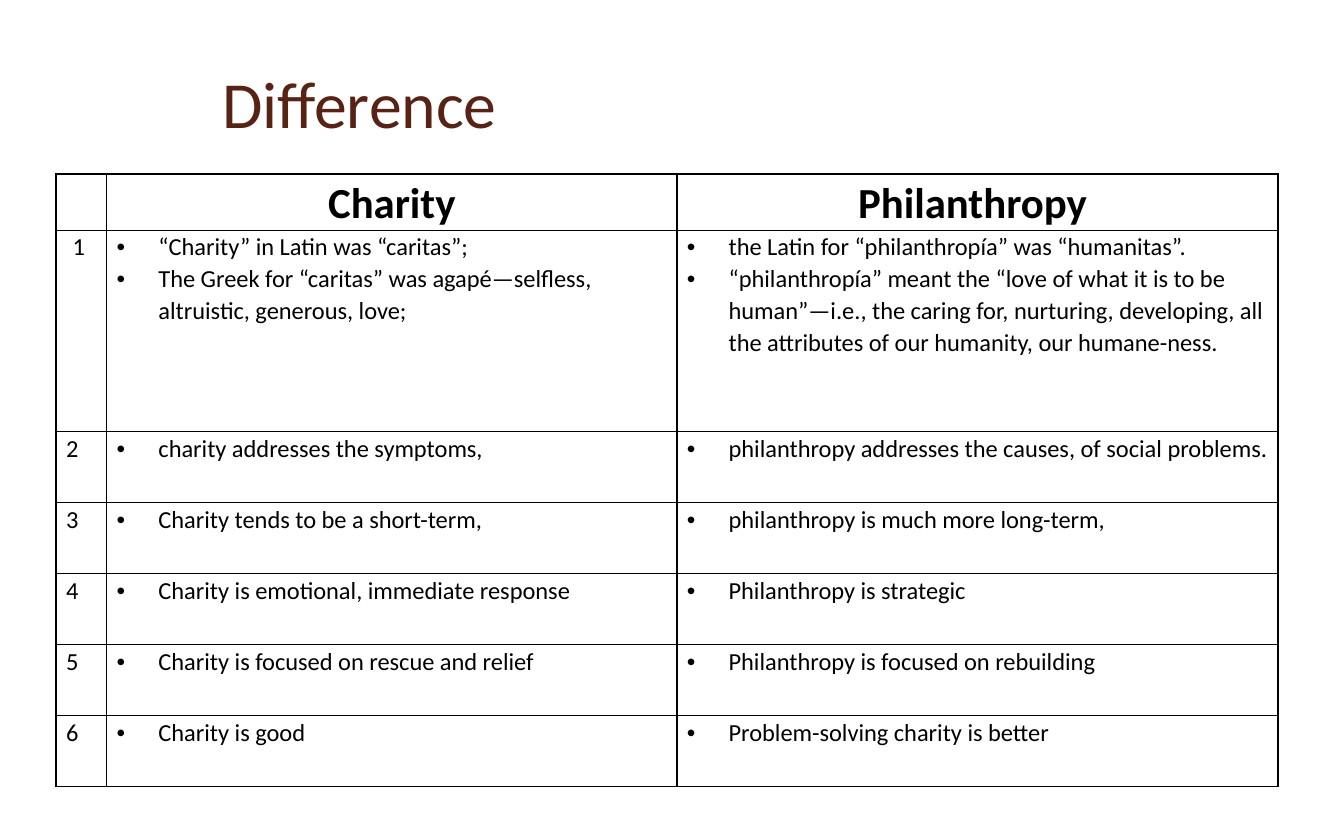
from lxml import etree
from pptx import Presentation
from pptx.dml.color import RGBColor
from pptx.enum.text import MSO_ANCHOR as Anchor, PP_ALIGN as Align
from pptx.oxml.ns import qn
from pptx.util import Inches, Pt

# Content
TITLE = "Difference"
HEADINGS = ["", "Charity", "Philanthropy "]
ROWS = [
    (["“Charity” in Latin was “caritas”;",
      "The Greek for “caritas” was agapé—selfless, altruistic, generous, love;"],
     ["the Latin for “philanthropía” was “humanitas”.",
      "“philanthropía” meant the “love of what it is to be human”—i.e., the caring for, "
      "nurturing, developing, all the attributes of our humanity, our humane-ness."]),
    (["charity addresses the symptoms,"],
     ["philanthropy addresses the causes, of social problems."]),
    (["Charity tends to be a short-term,"], ["philanthropy is much more long-term,"]),
    (["Charity is emotional, immediate response"], ["Philanthropy is strategic"]),
    (["Charity is focused on rescue and relief"], ["Philanthropy is focused on rebuilding"]),
    (["Charity is good"], ["Problem-solving charity is better"]),
]

# Formats
BROWN = RGBColor(0x57, 0x23, 0x14)
BLACK = RGBColor(0, 0, 0)
TITLE_FONT = {"size": Pt(43), "bold": False}
HEADING_FONT = {"size": Pt(28), "bold": True}
BODY_FONT = {"size": Pt(16), "bold": False}
CELL_FORMAT = {"margin_left": Inches(0.09), "margin_right": Inches(0.09),
               "margin_top": 0, "margin_bottom": 0, "vertical_anchor": Anchor.TOP}
COLUMN_WIDTHS = [0.46, 5.18, 5.46]
ROW_HEIGHTS = [0.51, 1.83] + [0.645] * 5
HANGING = 0.38


def apply(target, values):
    for name, value in values.items():
        setattr(target, name, value)


def write(para, text, font, color=BLACK):
    span = para.add_run()
    span.text = text
    apply(span.font, {"name": "Calibri", **font})
    span.font.color.rgb = color


def add_bullet(para):
    props = para._p.get_or_add_pPr()
    apply_indent(props, HANGING, -HANGING)
    etree.SubElement(props, qn("a:buFont"), typeface="Arial")
    etree.SubElement(props, qn("a:buChar"), char="•")


def apply_indent(props, margin, first):
    props.set("marL", str(Inches(margin)))
    props.set("indent", str(Inches(first)))


def add_borders(cell):
    props = cell._tc.get_or_add_tcPr()
    for place, side in enumerate(("lnL", "lnR", "lnT", "lnB")):
        line = etree.Element(qn(f"a:{side}"), w=str(Pt(1)))
        fill = etree.SubElement(line, qn("a:solidFill"))
        etree.SubElement(fill, qn("a:srgbClr"), val=str(BLACK))
        props.insert(place, line)


def fill_cell(cell, lines, font, align=Align.LEFT, bullets=False):
    apply(cell, CELL_FORMAT)
    cell.fill.background()
    add_borders(cell)
    for index, text in enumerate(lines):
        para = cell.text_frame.add_paragraph() if index else cell.text_frame.paragraphs[0]
        apply(para, {"alignment": align, "line_spacing": 1.07})
        if bullets:
            add_bullet(para)
        if text:
            write(para, text, font)


def main():
    deck = Presentation()
    apply(deck, {"slide_width": Inches(12.21), "slide_height": Inches(7.5)})
    page = deck.slides.add_slide(deck.slide_layouts[6])

    # Title
    box = page.shapes.add_textbox(Inches(1.92), Inches(0.3), Inches(10.01), Inches(1.25))
    apply(box.text_frame, {"word_wrap": True, "vertical_anchor": Anchor.MIDDLE})
    write(box.text_frame.paragraphs[0], TITLE, TITLE_FONT, BROWN)

    # Table grid
    table = page.shapes.add_table(
        len(ROW_HEIGHTS), len(COLUMN_WIDTHS), Inches(0.51), Inches(1.58),
        Inches(sum(COLUMN_WIDTHS)), Inches(sum(ROW_HEIGHTS))).table
    apply(table, {"first_row": False, "horz_banding": False})
    for column, width in zip(table.columns, COLUMN_WIDTHS):
        column.width = Inches(width)
    for row, height in zip(table.rows, ROW_HEIGHTS):
        row.height = Inches(height)

    # Headings, then numbered comparisons
    for column, heading in enumerate(HEADINGS):
        fill_cell(table.cell(0, column), [heading], HEADING_FONT, Align.CENTER)
    for number, pair in enumerate(ROWS, 1):
        fill_cell(table.cell(number, 0), [str(number)], BODY_FONT)
        for column, lines in enumerate(pair, 1):
            fill_cell(table.cell(number, column), lines, BODY_FONT, bullets=True)
    first_number = table.cell(1, 0).text_frame.paragraphs[0]
    apply_indent(first_number._p.get_or_add_pPr(), 0.06, 0)

    deck.save("out.pptx")


if __name__ == "__main__":
    main()
